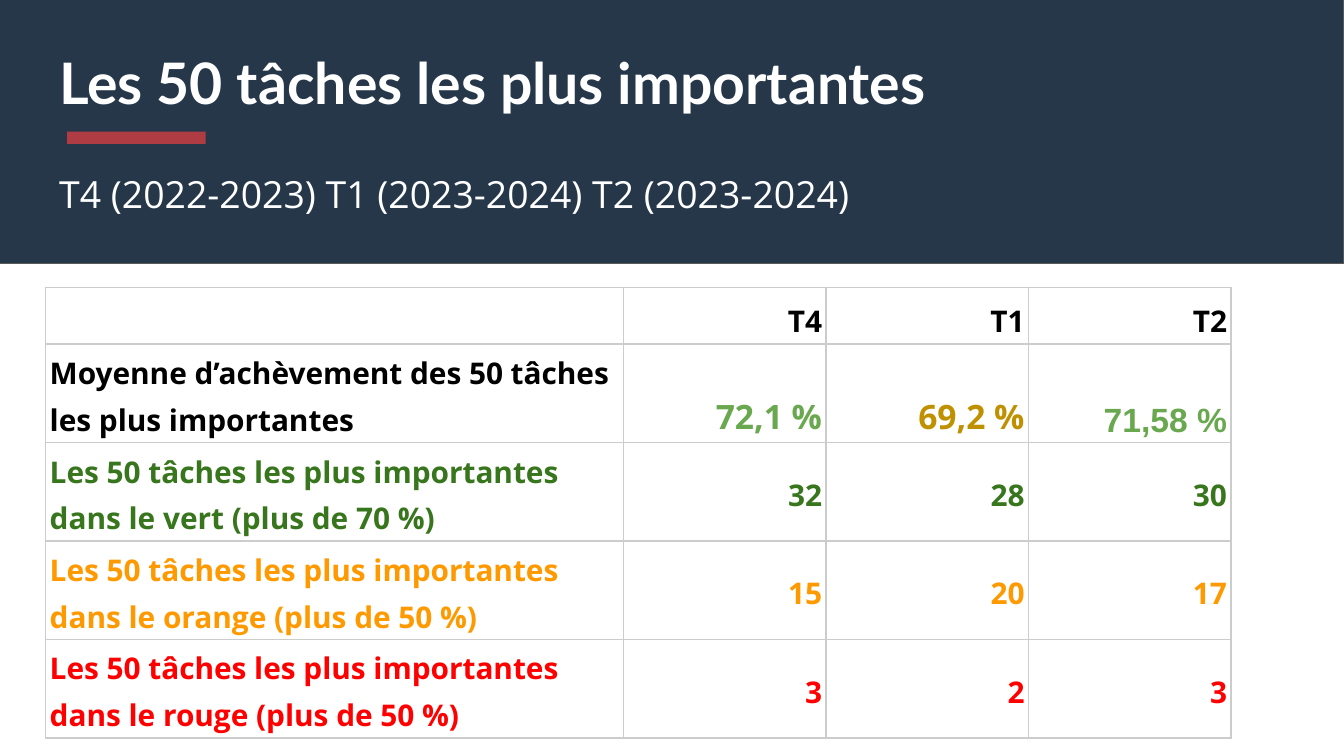
"""Build the slide on the completion of the 50 most important tasks."""
from lxml import etree
from pptx import Presentation
from pptx import util as u
from pptx.dml import color
from pptx.enum import shapes, text
from pptx.oxml import ns

COLORS = {
    "white": "FFFFFF", "black": "000000", "navy": "26374A", "outline": "595959",
    "accent": "AF3C43", "border": "CCCCCC", "light_green": "6AA84F", "gold": "BF9000",
    "green": "38761D", "orange": "FF9900", "red": "FF0000",
}


def add_run(paragraph, words, size, font, color_name, bold=False):
    run = paragraph.add_run()
    run.text = words
    run.font.size = u.Pt(size)
    run.font.name = font
    run.font.bold = bold
    run.font.color.rgb = color.RGBColor.from_string(COLORS[color_name])


def add_borders(cell):
    properties = cell._tc.get_or_add_tcPr()
    for side in ("lnL", "lnR", "lnT", "lnB"):
        line = etree.SubElement(properties, ns.qn(f"a:{side}"), w=str(u.Pt(0.75)))
        fill = etree.SubElement(line, ns.qn("a:solidFill"))
        etree.SubElement(fill, ns.qn("a:srgbClr"), val=COLORS["border"])


presentation = Presentation()
presentation.slide_width = u.Inches(10)
presentation.slide_height = u.Inches(10) * 9 // 16
slide = presentation.slides.add_slide(presentation.slide_layouts[1])
title, subtitle = slide.placeholders

for name, box in (("navy", (-0.05, -0.01, 10.05, 1.97)), ("accent", (0.5, 0.98, 1.03, 0.09))):
    shape = slide.shapes.add_shape(shapes.MSO_SHAPE.RECTANGLE, *map(u.Inches, box))
    shape.shadow.inherit = False
    shape.fill.solid()
    shape.fill.fore_color.rgb = color.RGBColor.from_string(COLORS[name])
    if name == "navy":
        shape.line.color.rgb = color.RGBColor.from_string(COLORS["outline"])
        shape.line.width = u.Pt(0.75)
        title.element.addprevious(shape.element)
    else:
        shape.line.fill.background()
        subtitle.element.addprevious(shape.element)

for placeholder, box, words, size, font, bold in (
    (title, (0.34, 0.25, 7.67, 1.05), "Les 50 tâches les plus importantes", 30.6, "Lato", True),
    (subtitle, (0.34, 1.17, 7.71, 0.5), "T4 (2022-2023) T1 (2023-2024) T2 (2023-2024)",
     20, "Open Sans", False),
):
    placeholder.left, placeholder.top, placeholder.width, placeholder.height = map(u.Inches, box)
    frame = placeholder.text_frame
    frame.word_wrap = True
    frame.auto_size = text.MSO_AUTO_SIZE.NONE
    frame.vertical_anchor = text.MSO_ANCHOR.TOP
    frame.margin_left = frame.margin_right = u.Inches(0.1)
    frame.margin_top = frame.margin_bottom = u.Inches(0.1)
    paragraph = frame.paragraphs[0]
    paragraph.alignment = text.PP_ALIGN.LEFT
    paragraph.space_before = u.Pt(0)
    add_run(paragraph, words, size, font, "white", bold)

paragraph_properties = subtitle.text_frame.paragraphs[0]._p.get_or_add_pPr()
paragraph_properties.set("marL", "0")
paragraph_properties.set("indent", "0")
etree.SubElement(paragraph_properties, ns.qn("a:buNone"))

rows = [
    ("black", ["", "T4", "T1", "T2"]),
    ("black", ["Moyenne d’achèvement des 50 tâches les plus importantes",
               "72,1 %", "69,2 %", "71,58 %"]),
    ("green", ["Les 50 tâches les plus importantes dans le vert (plus de 70 %)", "32", "28", "30"]),
    ("orange", ["Les 50 tâches les plus importantes dans le orange (plus de 50 %)",
                "15", "20", "17"]),
    ("red", ["Les 50 tâches les plus importantes dans le rouge (plus de 50 %)", "3", "2", "3"]),
]
average_styles = {
    1: (18, "Open Sans", "light_green"),
    2: (18, "Open Sans", "gold"),
    3: (18, "Arial", "light_green"),
}
table_width = 8.82
label_width = 4.3
column_widths = [label_width] + [(table_width - label_width) / 3] * 3
row_heights = [0.42] + [0.61] * 4

table = slide.shapes.add_table(
    len(rows), len(column_widths), u.Inches(0.34), u.Inches(2.14),
    u.Inches(table_width), u.Inches(sum(row_heights)),
).table
table.first_row = table.horz_banding = False
for column, width in zip(table.columns, column_widths):
    column.width = u.Inches(width)

for row_index, (row_color, values) in enumerate(rows):
    table.rows[row_index].height = u.Inches(row_heights[row_index])
    for column_index, value in enumerate(values):
        cell = table.cell(row_index, column_index)
        add_borders(cell)
        cell.fill.background()
        cell.margin_left = cell.margin_right = u.Inches(0.03)
        cell.margin_top = cell.margin_bottom = u.Inches(0.02)
        at_bottom = row_index == 0 or (row_index == 1 and column_index > 0)
        cell.vertical_anchor = text.MSO_ANCHOR.BOTTOM if at_bottom else text.MSO_ANCHOR.MIDDLE
        paragraph = cell.text_frame.paragraphs[0]
        paragraph.line_spacing = 1.15
        paragraph.alignment = text.PP_ALIGN.RIGHT if column_index else text.PP_ALIGN.LEFT
        style = (16, "Open Sans", row_color)
        if row_index == 1:
            style = average_styles.get(column_index, style)
        if value:
            add_run(paragraph, value, *style, bold=True)

presentation.save("out.pptx")
